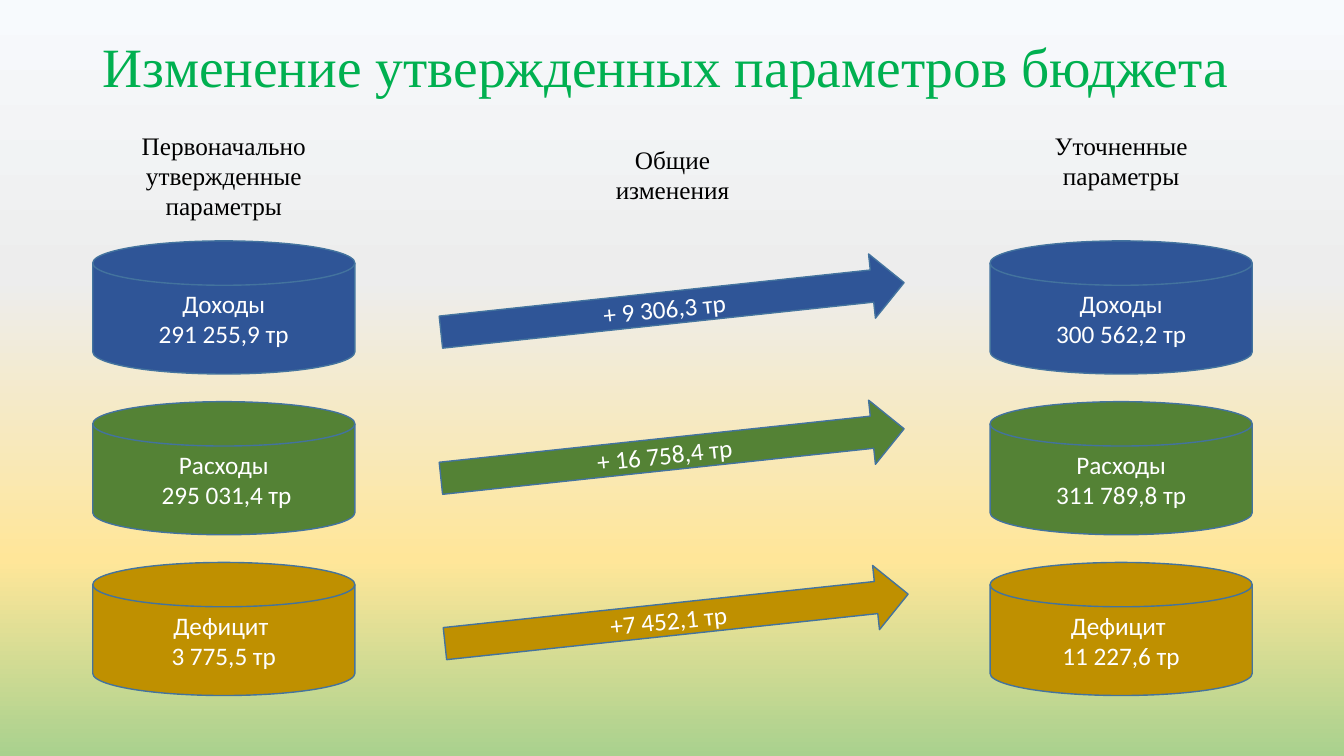
from lxml import etree
from pptx import Presentation
from pptx.dml.color import RGBColor
from pptx.enum import shapes, text
from pptx.oxml import ns
from pptx.util import Inches, Pt

BLUE = RGBColor(0x2F, 0x55, 0x97)
GREEN = RGBColor(0x54, 0x82, 0x35)
GOLD = RGBColor(0xBF, 0x90, 0x00)
OUTLINE = RGBColor(0x43, 0x73, 0x9E)
TITLE_GREEN = RGBColor(0x00, 0xB0, 0x50)
WHITE = RGBColor(0xFF, 0xFF, 0xFF)
BLACK = RGBColor(0x00, 0x00, 0x00)
BACKGROUND_STOPS = [
    (0, RGBColor(0xF7, 0xFA, 0xFD)),
    (37, RGBColor(0xED, 0xED, 0xED)),
    (74, RGBColor(0xFF, 0xE6, 0x99)),
    (100, RGBColor(0xA9, 0xD1, 0x8E)),
]

SERIF = "Times New Roman"
SANS = "Calibri"
LEFT_COLUMN, RIGHT_COLUMN = 0.92, 9.82
FIRST_ROW, ROW_STEP = 2.39, 1.595

# Column headings: text, left, top, height
HEADINGS = [
    ("Первоначально утвержденные параметры", 1.26, 1.24, 1.01),
    ("Общие изменения", 5.71, 1.38, 0.71),
    ("Уточненные параметры", 10.16, 1.24, 0.71),
]
# Budget rows: colour, approved, change, refined, arrow left, arrow top
ROWS = [
    (BLUE, "Доходы\v291 255,9 тр", "+ 9 306,3 тр",
     "Доходы\v300 562,2 тр", 4.36, 2.73),
    (GREEN, "Расходы\v 295 031,4 тр", "+ 16 758,4 тр",
     "Расходы\v311 789,8 тр", 4.36, 4.18),
    (GOLD, "Дефицит \n3 775,5 тр", "+7 452,1 тр",
     "Дефицит \n11 227,6 тр", 4.4, 5.82),
]


def paint_background(slide):
    fill = slide.background.fill
    fill.gradient()
    fill.gradient_angle = 270
    stop_list = fill.gradient_stops[0]._gs.getparent()
    for stop in list(stop_list):
        stop_list.remove(stop)
    for position, color in BACKGROUND_STOPS:
        stop = etree.SubElement(stop_list, ns.qn("a:gs"), pos=str(position * 1000))
        etree.SubElement(stop, ns.qn("a:srgbClr"), val=str(color))


def write_text(shape, content, font_name, size, color, alignment=text.PP_ALIGN.CENTER):
    frame = shape.text_frame
    frame.text = content
    frame.word_wrap = True
    for paragraph in frame.paragraphs:
        paragraph.alignment = alignment
        paragraph.font.name = font_name
        paragraph.font.size = Pt(size)
        paragraph.font.color.rgb = color


def set_title(slide, content):
    title = slide.shapes.title
    title.left, title.top = Inches(LEFT_COLUMN), Inches(0.4)
    title.width, title.height = Inches(11.5), Inches(0.57)
    write_text(title, content, SERIF, 39.6, TITLE_GREEN, text.PP_ALIGN.LEFT)
    title.text_frame.auto_size = text.MSO_AUTO_SIZE.NONE
    title.text_frame.vertical_anchor = text.MSO_ANCHOR.MIDDLE
    title.text_frame.paragraphs[0].line_spacing = 0.9


def add_heading(slide, content, left, top, height):
    box = slide.shapes.add_textbox(
        Inches(left), Inches(top), Inches(1.92), Inches(height))
    write_text(box, content, SERIF, 18, BLACK)


def add_figure(slide, kind, content, color, left, top, width, height):
    shape = slide.shapes.add_shape(
        kind, Inches(left), Inches(top), Inches(width), Inches(height))
    shape.shadow.inherit = False
    shape.fill.solid()
    shape.fill.fore_color.rgb = color
    shape.line.color.rgb = OUTLINE
    shape.line.width = Pt(1)
    write_text(shape, content, SANS, 18, WHITE)
    shape.text_frame.vertical_anchor = text.MSO_ANCHOR.MIDDLE
    return shape


def add_cylinder(slide, content, color, left, top):
    add_figure(slide, shapes.MSO_SHAPE.FLOWCHART_MAGNETIC_DISK,
               content, color, left, top, 2.6, 1.32)


def add_change_arrow(slide, content, color, left, top):
    arrow = add_figure(slide, shapes.MSO_SHAPE.RIGHT_ARROW,
                       content, color, left, top, 4.62, 0.64)
    arrow.rotation = 353.9


def main():
    presentation = Presentation()
    presentation.slide_width = Inches(13.33)
    presentation.slide_height = Inches(7.5)
    slide = presentation.slides.add_slide(presentation.slide_layouts[5])

    # Background, title and column headings
    paint_background(slide)
    set_title(slide, "Изменение утвержденных параметров бюджета")
    for heading in HEADINGS:
        add_heading(slide, *heading)

    # One row per budget parameter
    for index, row in enumerate(ROWS):
        color, approved, change, refined, arrow_left, arrow_top = row
        top = FIRST_ROW + index * ROW_STEP
        add_cylinder(slide, approved, color, LEFT_COLUMN, top)
        add_change_arrow(slide, change, color, arrow_left, arrow_top)
        add_cylinder(slide, refined, color, RIGHT_COLUMN, top)

    presentation.save("out.pptx")


if __name__ == "__main__":
    main()
